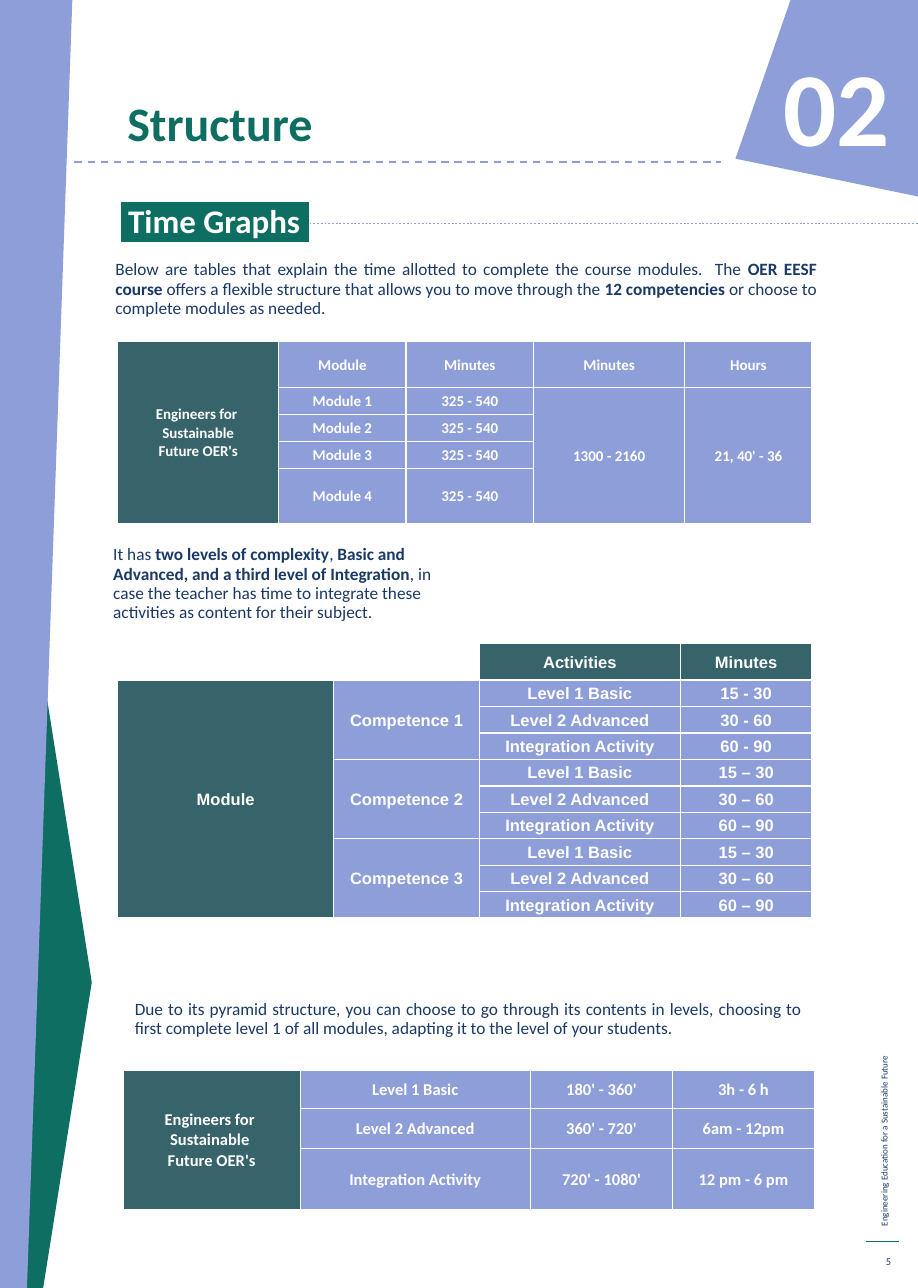
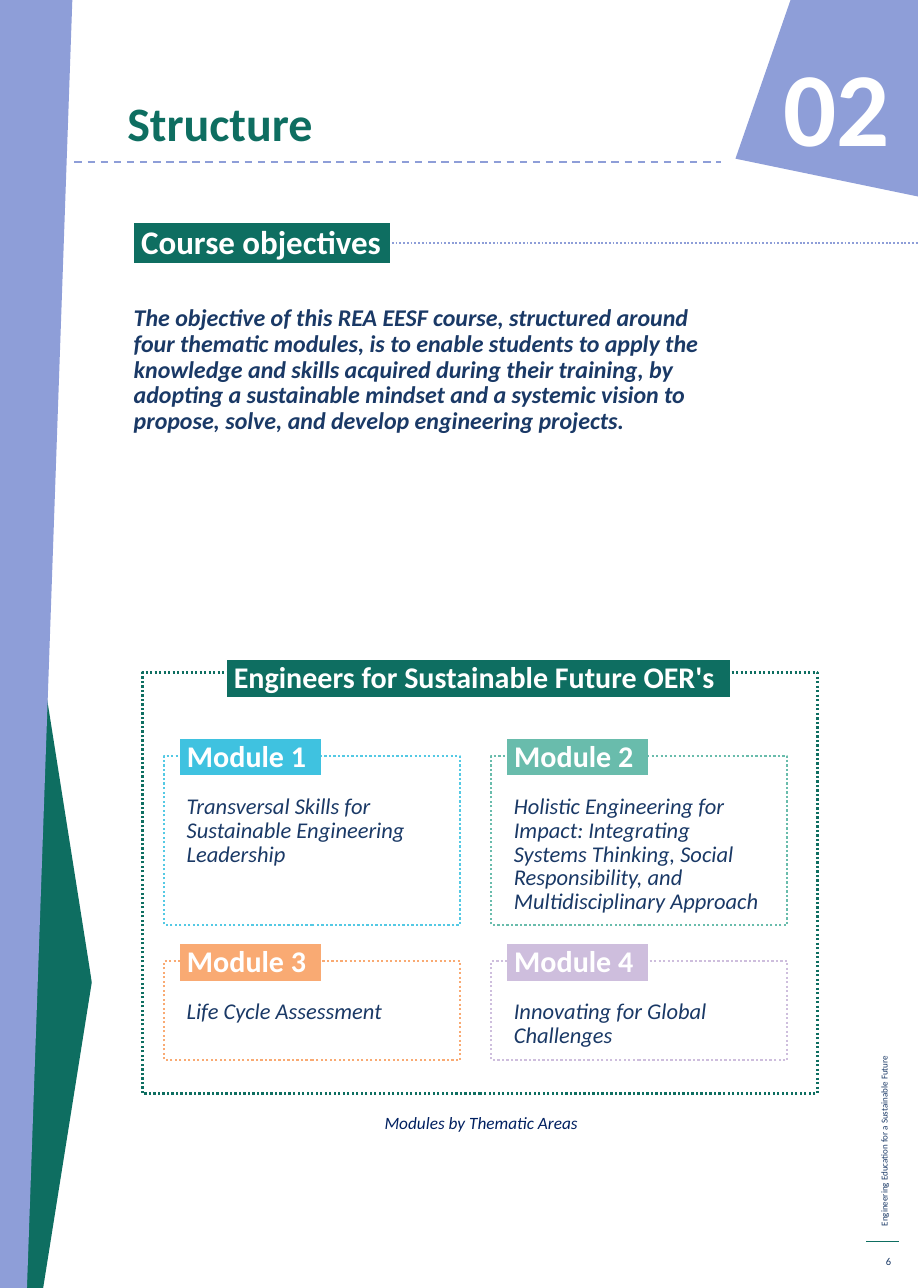
from dataclasses import dataclass

import lxml.etree
import pptx
import pptx.dml.color
import pptx.enum.dml
import pptx.enum.shapes
import pptx.enum.text
import pptx.oxml.ns
import pptx.util

ALIGN = pptx.enum.text.PP_ALIGN
ANCHOR = pptx.enum.text.MSO_ANCHOR
DASH = pptx.enum.dml.MSO_LINE
qn = pptx.oxml.ns.qn

COLORS = {
    "periwinkle": "8E9ED8", "green": "0E6E61", "slate": "36646A", "navy": "1A3966",
    "deep navy": "002060", "white": "FFFFFF", "sky": "54C9E4", "cyan": "3FC2E0",
    "mint": "69BCAC", "orange": "F9AA73", "lilac": "CEBEDD",
}
FONT = "Calibri"
CELLS_PER_INCH = 10
COLUMNS, ROWS = 85, 119.3  # the page grid, in tenths of an inch

Box = tuple[float, float, float, float]
Point = tuple[float, float]


@dataclass
class TimeTable:
    left: float
    top: float
    columns: tuple[float, ...]
    rows: tuple[float, ...]
    texts: list[tuple[str, ...]]
    merges: list[Box]  # row, column, rows spanned, columns spanned
    dark: set[tuple[int, int]]
    size: float
    font: str = FONT


@dataclass
class ModuleCard:
    column: int
    row: int
    title: str
    text: str
    frame_color: str
    label_color: str


OER_NAME = "Engineers for \nSustainable\nFuture OER's"
LEVELS = ("Level 1 Basic", "Level 2 Advanced", "Integration Activity")


def competence_rows() -> list[tuple[str, ...]]:
    rows = []
    for number in (1, 2, 3):
        dash = "-" if number == 1 else "–"
        for index, (level, low, high) in enumerate(zip(LEVELS, (15, 30, 60), (30, 60, 90))):
            first = index == 0
            rows.append(("Module" if first and number == 1 else "", "",
                         f"Competence {number}" if first else "", level, f"{low} {dash} {high}"))
    return rows


TIME_TABLES = [
    TimeTable(
        10.9, 31.6, (14.9, 11.8, 11.8, 14, 11.8), (4.3, 2.5, 2.5, 2.5, 5),
        [(OER_NAME, "Module", "Minutes", "Minutes", "Hours"),
         ("", "Module 1", "325 - 540", "1300 - 2160", "21, 40' - 36")]
        + [("", f"Module {number}", "325 - 540", "", "") for number in (2, 3, 4)],
        [(0, 0, 5, 1), (1, 3, 4, 1), (1, 4, 4, 1)], {(0, 0)}, 10),
    TimeTable(
        10.9, 59.6, (10.9, 9.1, 13.5, 18.6, 12.2), (3.4,) + (2.45,) * 9,
        [("", "", "", "Activities", "Minutes")] + competence_rows(),
        [(1, 0, 9, 2), (1, 2, 3, 1), (4, 2, 3, 1), (7, 2, 3, 1)],
        {(0, 3), (0, 4), (1, 0)}, 11, "Arial"),
    TimeTable(
        11.4, 99.1, (16.4, 21.3, 13.2, 13.1), (3.6, 3.7, 5.5),
        [(OER_NAME.replace("able", "able "), LEVELS[0], "180' - 360'", "3h - 6 h"),
         ("", LEVELS[1], "360' - 720'", "6am - 12pm"),
         ("", LEVELS[2], "720' - 1080'", "12 pm - 6 pm")],
        [(0, 0, 3, 1)], {(0, 0)}, 11),
]

CARD_LEFTS = (15.2, 45.5)
CARD_ROWS = ((70, 15.7), (89, 9.2))  # top, height
CARD_WIDTH = 27.4
MODULE_CARDS = [
    ModuleCard(0, 0, "Module 1", "Transversal Skills for Sustainable Engineering Leadership",
               "sky", "cyan"),
    ModuleCard(1, 0, "Module 2", "Holistic Engineering for Impact: Integrating Systems Thinking, "
               "Social Responsibility, and Multidisciplinary Approach", "mint", "mint"),
    ModuleCard(0, 1, "Module 3", "Life Cycle Assessment", "orange", "orange"),
    ModuleCard(1, 1, "Module 4", "Innovating for Global Challenges", "lilac", "lilac"),
]


def grid(cells: float) -> int:
    return pptx.util.Inches(cells / CELLS_PER_INCH)


def rgb(name: str) -> pptx.dml.color.RGBColor:
    return pptx.dml.color.RGBColor.from_string(COLORS[name])


def write_text(frame, text: str, *, size: float, color: str = "navy", bold: bool = False,
               italic: bool = False, font: str = FONT, align=ALIGN.LEFT, spacing=None,
               before: float = 0, highlight: str = "", tail: str = "") -> None:
    """Write one paragraph a line; ** switches bold, tail is written in the highlight colour."""
    for index, line in enumerate(text.split("\n")):
        paragraph = frame.paragraphs[0] if index == 0 else frame.add_paragraph()
        paragraph.alignment = align
        if spacing:
            paragraph.line_spacing = spacing
        if before:
            paragraph.space_before = pptx.util.Pt(before)
        parts = [(part, color, bold != bool(number % 2))
                 for number, part in enumerate(line.split("**"))]
        if tail:
            parts.append((tail, highlight, bold))
        for part, part_color, part_bold in parts:
            run = paragraph.add_run()
            run.text = part
            run.font.size = pptx.util.Pt(size)
            run.font.name = font
            run.font.bold = part_bold
            run.font.italic = italic
            run.font.color.rgb = rgb(part_color)
            if highlight:
                mark = lxml.etree.Element(qn("a:highlight"))
                lxml.etree.SubElement(mark, qn("a:srgbClr"), val=COLORS[highlight])
                run.font._element.find(qn("a:solidFill")).addnext(mark)


def add_text(slide, box: Box, text: str, *, anchor=ANCHOR.TOP, rotation: float = 0, **text_format):
    shape = slide.shapes.add_textbox(*map(grid, box))
    shape.rotation = rotation
    shape.text_frame.word_wrap = True
    shape.text_frame.vertical_anchor = anchor
    write_text(shape.text_frame, text, **text_format)


def add_tag(slide, box: Box, text: str, color: str, *, size: float, tail: str = ". ",
            **text_format) -> None:
    """Add white bold text on a highlighted strip."""
    add_text(slide, box, f" {text}", size=size, color="white", bold=True,
             highlight=color, tail=tail, **text_format)


def add_line(slide, start: Point, end: Point, color: str, width: float, dash=None) -> None:
    line = slide.shapes.add_connector(pptx.enum.shapes.MSO_CONNECTOR.STRAIGHT,
                                      *map(grid, start + end))
    line.line.color.rgb = rgb(color)
    line.line.width = pptx.util.Pt(width)
    if dash:
        line.line.dash_style = dash
    lxml.etree.SubElement(line._element.spPr, qn("a:effectLst"))


def add_polygon(slide, points: list[Point], color: str) -> None:
    corners = [(grid(x), grid(y)) for x, y in points]
    builder = slide.shapes.build_freeform(*corners[0])
    builder.add_line_segments(corners[1:], close=True)
    shape = builder.convert_to_shape()
    shape.shadow.inherit = False
    shape.fill.solid()
    shape.fill.fore_color.rgb = rgb(color)
    shape.line.fill.background()


def add_dotted_frame(slide, box: Box, color: str) -> None:
    shape = slide.shapes.add_shape(pptx.enum.shapes.MSO_SHAPE.RECTANGLE, *map(grid, box))
    shape.shadow.inherit = False
    shape.fill.background()
    shape.line.color.rgb = rgb(color)
    shape.line.width = pptx.util.Pt(1.5)
    shape.line.dash_style = DASH.ROUND_DOT


def add_cell_borders(cell) -> None:
    properties = cell._tc.get_or_add_tcPr()
    for index, side in enumerate(("a:lnL", "a:lnR", "a:lnT", "a:lnB")):
        border = lxml.etree.Element(qn(side), w=str(pptx.util.Pt(1)))
        fill = lxml.etree.SubElement(border, qn("a:solidFill"))
        lxml.etree.SubElement(fill, qn("a:srgbClr"), val=COLORS["white"])
        properties.insert(index, border)


def add_time_table(slide, data: TimeTable) -> None:
    table = slide.shapes.add_table(
        len(data.rows), len(data.columns), grid(data.left), grid(data.top),
        grid(sum(data.columns)), grid(sum(data.rows))).table
    table.first_row = table.horz_banding = False
    for column, width in zip(table.columns, data.columns):
        column.width = grid(width)
    for row, height in zip(table.rows, data.rows):
        row.height = grid(height)
    for row, column, height, width in data.merges:
        table.cell(row, column).merge(table.cell(row + height - 1, column + width - 1))
    for row, texts in enumerate(data.texts):
        for column, text in enumerate(texts):
            cell = table.cell(row, column)
            cell.margin_left = cell.margin_right = cell.margin_top = grid(0.1)
            cell.margin_bottom = 0
            cell.vertical_anchor = ANCHOR.MIDDLE
            if text:
                cell.fill.solid()
                cell.fill.fore_color.rgb = rgb(
                    "slate" if (row, column) in data.dark else "periwinkle")
                write_text(cell.text_frame, text, size=data.size, color="white", bold=True,
                           font=data.font, align=ALIGN.CENTER)
            else:
                cell.fill.background()
                lxml.etree.SubElement(cell.text_frame.paragraphs[0]._p, qn("a:endParaRPr"),
                                      sz=str(data.size * 100))
            add_cell_borders(cell)


def add_module_card(slide, card: ModuleCard) -> None:
    left = CARD_LEFTS[card.column]
    top, height = CARD_ROWS[card.row]
    add_dotted_frame(slide, (left, top, CARD_WIDTH, height), card.frame_color)
    add_text(slide, (left + 1.1, top + 3.2, 25.3, 8), card.text, size=15, italic=True,
             spacing=pptx.util.Pt(15.8))
    add_tag(slide, (left + 0.5, top - 2.2, 17.5, 3.7), card.title, card.label_color, size=20)


def add_page(presentation, number: int):
    """Add a slide with the side bands, chapter title and footer."""
    slide = presentation.slides.add_slide(presentation.slide_layouts[6])
    add_polygon(slide, [(4, ROWS), (2.3, ROWS), (2.3, 51.7), (8.3, 89.7), (8.5, 91)], "green")
    add_polygon(slide, [(0, 0), (6.7, 0), (2.5, ROWS), (0, ROWS)], "periwinkle")
    add_polygon(slide, [(COLUMNS, 0), (73.2, 0), (68.1, 14.7), (COLUMNS, 18.2)], "periwinkle")
    add_text(slide, (65.4, 3.4, 18, 14.2), "02", size=70, color="white", bold=True,
             align=ALIGN.RIGHT)
    add_text(slide, (10.8, 6.7, 45.1, 7.7), "Structure", size=32, color="green", bold=True,
             anchor=ANCHOR.BOTTOM, spacing=0.74)
    add_line(slide, (6.9, 15), (66.8, 15), "periwinkle", 1.25, DASH.DASH)
    add_text(slide, (59.4, 91.1, 44.9, 2), "Engineering Education for a Sustainable Future",
             size=6, rotation=270)
    add_line(slide, (80.2, 115), (83.2, 115), "green", 0.75)
    add_text(slide, (80.2, 115.4, 3.3, 2.9), str(number), size=7, align=ALIGN.RIGHT,
             anchor=ANCHOR.MIDDLE)
    return slide


def add_heading(slide, left: float, top: float, rule_top: float, text: str, **text_format) -> None:
    add_line(slide, (25.2, rule_top), (COLUMNS, rule_top), "periwinkle", 1.25, DASH.ROUND_DOT)
    add_tag(slide, (left, top, 66.4, 6.5), text, "green", size=22, tail=".", **text_format)


def add_time_graphs(presentation) -> None:
    slide = add_page(presentation, 5)
    add_heading(slide, 10.2, 18.5, 20.7, "Time Graphs", spacing=0.9, before=8.5)
    body = {"size": 11.5, "spacing": pptx.util.Pt(12.8)}
    add_text(slide, (9.7, 23.6, 66.9, 13.8),
             "Below are tables that explain the time allotted to complete the course modules.  "
             "The **OER EESF course** offers a flexible structure that allows you to move through "
             "the** 12 competencies **or choose to complete modules as needed.",
             align=ALIGN.JUSTIFY, **body)
    add_text(slide, (9.5, 50, 33.5, 11.8),
             "It has **two levels of complexity**, **Basic and Advanced, and a third level of "
             "Integration**, in case the teacher has time to integrate these activities as "
             "content for their subject.", **body)
    add_text(slide, (11.5, 92.1, 63.7, 6.4),
             "Due to its pyramid structure, you can choose to go through its contents in levels, "
             "choosing to first complete level 1 of all modules, adapting it to the level of "
             "your students.", align=ALIGN.JUSTIFY, **body)
    for data in TIME_TABLES:
        add_time_table(slide, data)


def add_course_objectives(presentation) -> None:
    slide = add_page(presentation, 6)
    add_heading(slide, 11.4, 20, 22.5, "Course objectives", align=ALIGN.JUSTIFY)
    add_text(slide, (11.4, 27.8, 55.3, 20.7),
             "The objective of this REA EESF course, structured around four thematic modules, is "
             "to enable students to apply the knowledge and skills acquired during their "
             "training, by adopting a sustainable mindset and a systemic vision to propose, "
             "solve, and develop engineering projects.",
             size=16, bold=True, italic=True, spacing=pptx.util.Pt(17.2))
    for card in MODULE_CARDS:
        add_module_card(slide, card)
    add_dotted_frame(slide, (13.2, 62.3, 62.5, 39), "green")
    add_tag(slide, (12.8, 60.5, 63, 3.7), "Engineers for Sustainable Future OER's", "green",
            size=20, align=ALIGN.CENTER)
    add_text(slide, (13.3, 102.5, 62.5, 2.9), "Modules by Thematic Areas", size=11.5,
             color="deep navy", italic=True, align=ALIGN.CENTER)


def main() -> None:
    presentation = pptx.Presentation()
    presentation.slide_width, presentation.slide_height = grid(COLUMNS), grid(ROWS)
    add_time_graphs(presentation)
    add_course_objectives(presentation)
    presentation.save("out.pptx")


if __name__ == "__main__":
    main()
